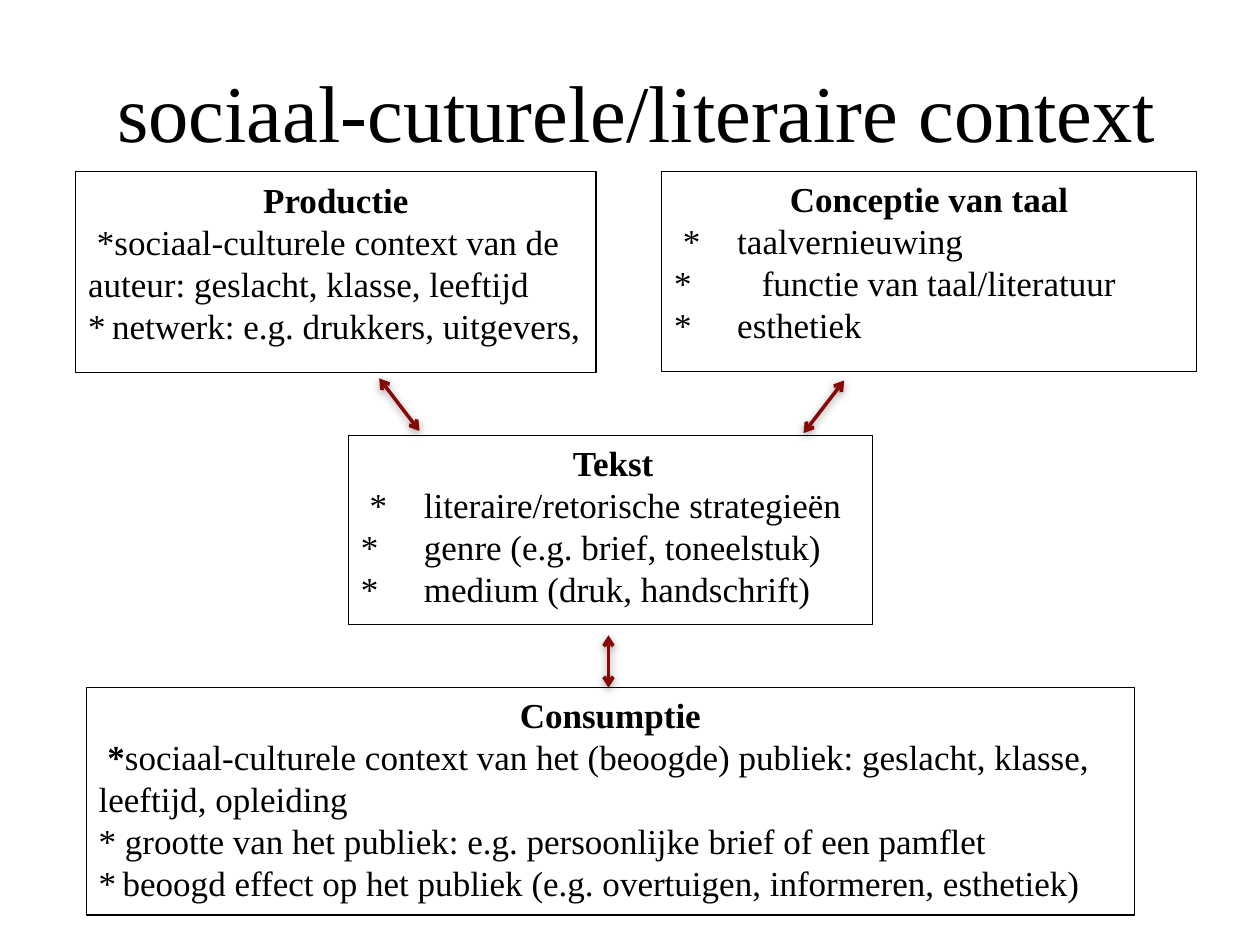
from lxml import etree
from pptx import Presentation
from pptx import util as u
from pptx.dml import color
from pptx.enum import shapes, text
from pptx.oxml import ns

COLORS = {"text": "000000", "frame": "000000", "arrow": "860908", "shadow": "000000"}
FONT = "Times New Roman"

# Each box: heading, heading indent, box, items of marker, wording, left margin, first-line indent
BOXES = [
    ("Consumptie", 0, (49.3, 393, 599, 130), [
        ("*", "sociaal-culturele context van het (beoogde) publiek: geslacht, klasse, leeftijd, opleiding", 0, 5),
        ("* ", "grootte van het publiek: e.g. persoonlijke brief of een pamflet", 0, 0),
        ("*\t", "beoogd effect op het publiek (e.g. overtuigen, informeren, esthetiek)", 13.7, -13.7)]),
    ("Productie", 0, (43.3, 98.2, 297.3, 114.5), [
        ("*", "sociaal-culturele context van de auteur: geslacht, klasse, leeftijd", 0, 5),
        ("*\t", "netwerk: e.g. drukkers, uitgevers,", 13.7, -13.7)]),
    ("Conceptie van taal", -5, (378.2, 98, 305.5, 114.5), [
        ("*\t", "taalvernieuwing", 36, -31),
        ("*\t", "functie van taal/literatuur", 50, -50),
        ("*\t", "esthetiek", 36, -36)]),
    ("Tekst", 3, (199.2, 249, 299.5, 108), [
        ("*\t", "literaire/retorische strategieën", 36, -31),
        ("*\t", "genre (e.g. brief, toneelstuk)", 36, -36),
        ("*\t", "medium (druk, handschrift)", 36, -36)]),
]
ARROWS = [(347.7, 363, 347.7, 393), (239.7, 246.3, 216.7, 216.2), (459.2, 247.5, 482.4, 217.4)]


def rgb(name):
    """Return the named colour."""
    return color.RGBColor.from_string(COLORS[name])


def style(paragraph, size, alignment, bold=False):
    """Set the font and alignment of a paragraph."""
    paragraph.alignment = alignment
    paragraph.font.name = FONT
    paragraph.font.size = u.Pt(size)
    paragraph.font.bold = bold
    paragraph.font.color.rgb = rgb("text")


def set_indent(paragraph, margin, indent):
    """Set the left margin and first-line indent of a paragraph."""
    properties = paragraph._p.get_or_add_pPr()
    properties.set("marL", str(u.Pt(margin)))
    properties.set("indent", str(u.Pt(indent)))


def add_title(slide, wording, box):
    """Fill and place the title placeholder."""
    title = slide.shapes.title
    title.left, title.top, title.width, title.height = map(u.Pt, box)
    title.text_frame.text = wording
    title.text_frame.vertical_anchor = text.MSO_ANCHOR.MIDDLE
    style(title.text_frame.paragraphs[0], 46, text.PP_ALIGN.CENTER)


def add_box(slide, heading, heading_indent, box, items):
    """Draw a framed box with a centred heading and starred items."""
    shape = slide.shapes.add_shape(shapes.MSO_SHAPE.RECTANGLE, *map(u.Pt, box))
    shape.shadow.inherit = False
    shape.fill.background()
    shape.line.color.rgb = rgb("frame")
    shape.line.width = u.Pt(0.75)
    frame = shape.text_frame
    frame.word_wrap = True
    frame.vertical_anchor = text.MSO_ANCHOR.TOP
    frame.text = heading
    set_indent(frame.paragraphs[0], 0, heading_indent)
    style(frame.paragraphs[0], 20, text.PP_ALIGN.CENTER, True)
    for marker, wording, margin, indent in items:
        paragraph = frame.add_paragraph()
        set_indent(paragraph, margin, indent)
        style(paragraph, 20, text.PP_ALIGN.LEFT)
        star = paragraph.add_run()
        star.text = marker
        if heading == "Consumptie" and marker == "*":
            star.font.bold = True
        paragraph.add_run().text = wording
    for paragraph in frame.paragraphs:
        paragraph.line_spacing = u.Pt(24)


def add_arrow(slide, ends):
    """Draw a two-headed arrow with a soft shadow below it."""
    arrow = slide.shapes.add_connector(shapes.MSO_CONNECTOR.STRAIGHT, *map(u.Pt, ends))
    arrow.line.color.rgb = rgb("arrow")
    arrow.line.width = u.Pt(2)
    line = arrow.line._get_or_add_ln()
    for end in ("a:headEnd", "a:tailEnd"):
        etree.SubElement(line, ns.qn(end), type="arrow")
    effects = etree.SubElement(arrow._element.spPr, ns.qn("a:effectLst"))
    shadow = etree.SubElement(effects, ns.qn("a:outerShdw"), blurRad=str(u.Pt(5)),
                              dist=str(u.Pt(1.6)), dir="5400000", rotWithShape="0")
    tint = etree.SubElement(shadow, ns.qn("a:srgbClr"), val=COLORS["shadow"])
    etree.SubElement(tint, ns.qn("a:alpha"), val="38000")


def main():
    """Build the slide and save it."""
    presentation = Presentation()
    presentation.slide_width, presentation.slide_height = u.Pt(720), u.Pt(540)
    slide = presentation.slides.add_slide(presentation.slide_layouts[5])
    add_title(slide, "sociaal-cuturele/literaire context", (53.3, 28.7, 621, 68.5))
    for heading, heading_indent, box, items in BOXES:
        add_box(slide, heading, heading_indent, box, items)
    for ends in ARROWS:
        add_arrow(slide, ends)
    presentation.save("out.pptx")


if __name__ == "__main__":
    main()
